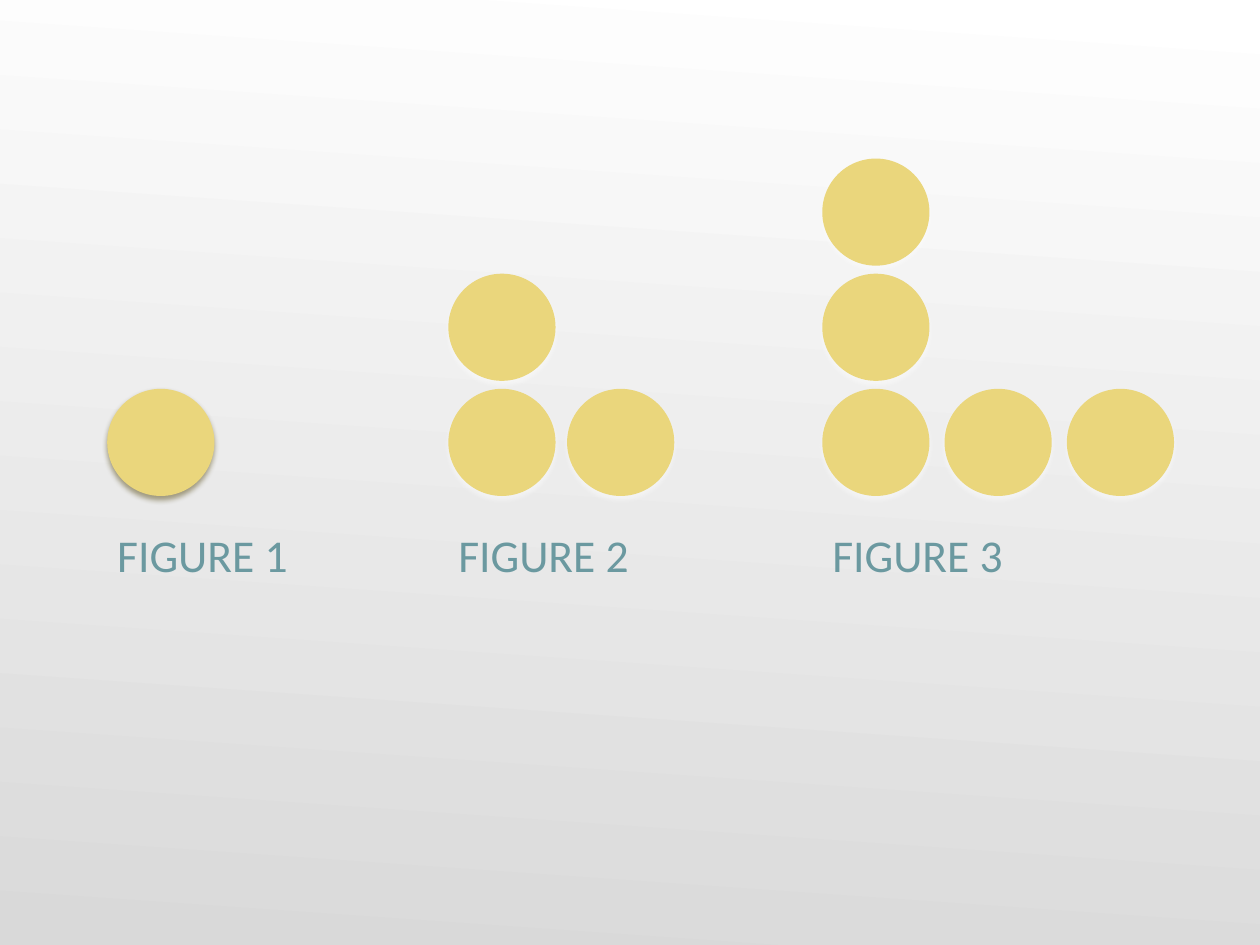
from lxml.etree import SubElement
from pptx import Presentation
from pptx.dml.color import RGBColor
from pptx.enum.shapes import MSO_SHAPE as SHAPE
from pptx.enum.text import MSO_ANCHOR as ANCHOR, MSO_AUTO_SIZE as AUTO, PP_ALIGN as ALIGN
from pptx.oxml.ns import qn
from pptx.util import Inches, Pt

WIDTH, HEIGHT = 14.22, 10.67
DOT = 1.21
ROW_STEP = 1.3
BASE_TOP = 4.39
LABEL_TOP, LABEL_W, LABEL_H = 5.9, 2.15, 0.72
GOLD, TEAL = "EAD67C", "6B99A0"
DARK_SHADOW, PALE_SHADOW = "4F420B", "FFFFFF"

# number, left edge, column step
FIGURES = [(1, 1.21, 0), (2, 5.06, 1.34), (3, 9.28, 1.38)]


def rgb(value):
    return RGBColor.from_string(value)


def set_background(slide):
    fill = slide.background.fill
    fill.gradient()
    fill.gradient_angle = 360 - 94
    for stop, position, color in zip(fill.gradient_stops, (0, 1), ("FFFFFF", "D9D9D9")):
        stop.position = position
        stop.color.rgb = rgb(color)


def add_shadow(sp, color):
    sp.shadow.inherit = False
    effects = sp._element.spPr.find(qn("a:effectLst"))
    shadow = SubElement(effects, qn("a:outerShdw"), blurRad=str(Pt(4.5)),
                        dist=str(Pt(3)), dir=str(90 * 60000), rotWithShape="0")
    clr = SubElement(shadow, qn("a:srgbClr"), val=color)
    SubElement(clr, qn("a:alpha"), val="48000")


def add_dot(shapes, left, top, shadow):
    sp = shapes.add_shape(SHAPE.OVAL, Inches(left), Inches(top), Inches(DOT), Inches(DOT))
    sp.fill.solid()
    sp.fill.fore_color.rgb = rgb(GOLD)
    sp.line.fill.background()
    add_shadow(sp, shadow)


def add_label(shapes, left, text):
    sp = shapes.add_textbox(Inches(left), Inches(LABEL_TOP), Inches(LABEL_W), Inches(LABEL_H))
    tf = sp.text_frame
    tf.word_wrap = False
    tf.auto_size = AUTO.SHAPE_TO_FIT_TEXT
    tf.vertical_anchor = ANCHOR.TOP
    p = tf.paragraphs[0]
    p.alignment = ALIGN.CENTER
    r = p.add_run()
    r.text = text
    r.font.name = "Calibri"
    r.font.size = Pt(37)
    r.font.color.rgb = rgb(TEAL)


def add_figure(slide, number, left, column_step):
    """Draw an L of dots with arms as long as the figure number, and its label."""
    single = number == 1
    shapes = slide.shapes if single else slide.shapes.add_group_shape().shapes
    shadow = DARK_SHADOW if single else PALE_SHADOW
    cells = [(0, row) for row in range(number)] + [(col, 0) for col in range(1, number)]
    for col, row in cells:
        add_dot(shapes, left + col * column_step, BASE_TOP - row * ROW_STEP, shadow)
    add_label(slide.shapes, left, f"FIGURE {number}")


def main():
    prs = Presentation()
    prs.slide_width, prs.slide_height = Inches(WIDTH), Inches(HEIGHT)
    slide = prs.slides.add_slide(prs.slide_layouts[6])
    set_background(slide)
    for number, left, column_step in FIGURES:
        add_figure(slide, number, left, column_step)
    prs.save("out.pptx")


if __name__ == "__main__":
    main()
